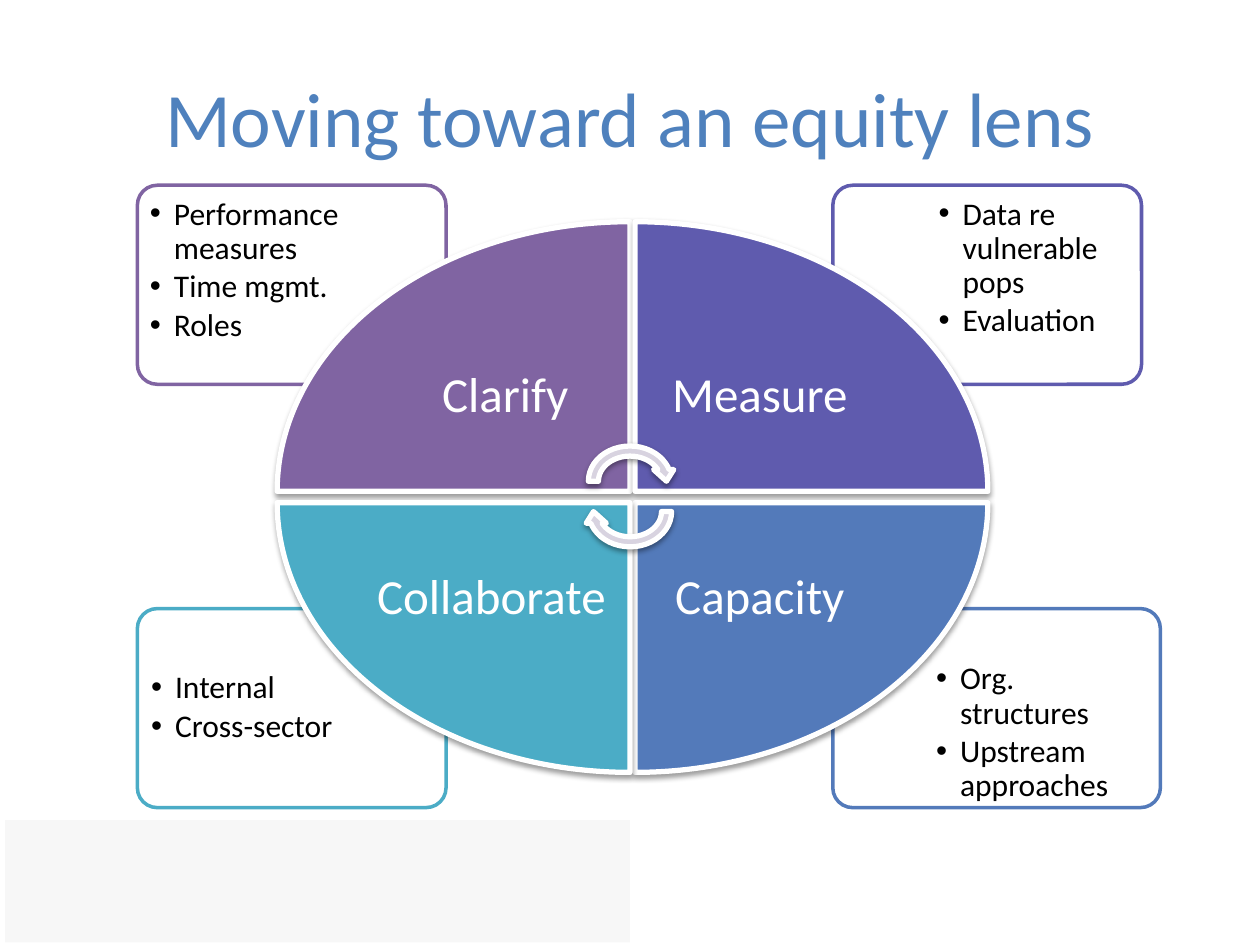
from lxml import etree
from pptx import Presentation
from pptx.dml.color import RGBColor
from pptx.enum.shapes import MSO_SHAPE
from pptx.enum.text import MSO_ANCHOR, PP_ALIGN
from pptx.oxml.ns import qn
from pptx.util import Inches, Pt

RECTANGLE = MSO_SHAPE.RECTANGLE
ROUNDED = MSO_SHAPE.ROUNDED_RECTANGLE
WEDGE = MSO_SHAPE.PIE_WEDGE
ARROW = MSO_SHAPE.CIRCULAR_ARROW
TOP, MIDDLE = MSO_ANCHOR.TOP, MSO_ANCHOR.MIDDLE
CENTER = PP_ALIGN.CENTER
FONT = "Calibri"

# Content: quadrants clockwise from top left; boxes are left, top, width, height
TITLE = "Moving toward an equity lens"
EVEN = (0.07,) * 4
QUADRANTS = [
    dict(name="Clarify", color="8064A2", points=["Performance measures", "Time mgmt.", "Roles"],
         card=(1.09, 1.47, 2.45, 1.58), list_box=(1.12, 1.5, 1.65, 1.12), list_insets=EVEN,
         label=(3.02, 2.39, 1.98, 1.52), label_insets=(0.22,) * 4),
    dict(name="Measure", color="5F5BAE", points=["Data re vulnerable pops", "Evaluation"],
         card=(6.61, 1.47, 2.45, 1.58), list_box=(7.38, 1.5, 1.64, 1.12), list_insets=EVEN,
         label=(5.04, 2.39, 1.98, 1.52), label_insets=(0.22,) * 4),
    dict(name="Capacity", color="537ABA", points=["Org. structures", "Upstream approaches"],
         card=(6.61, 4.83, 2.6, 1.58), list_box=(7.43, 5.26, 1.75, 1.12),
         list_insets=(0, 0, 0.07, 0.16),
         label=(5.04, 3.99, 1.98, 1.52), label_insets=(0.22,) * 4),
    dict(name="Collaborate", color="4BACC6", points=["Internal", "Cross-sector"],
         card=(1.09, 4.83, 2.45, 1.58), list_box=(1.13, 5.26, 1.64, 1.12), list_insets=EVEN,
         label=(2.98, 3.99, 2, 1.52), label_insets=(0, 0.22, 0.16, 0.22)),
]

# Wheel geometry
WEDGE_WIDTH, WEDGE_HEIGHT = 2.8, 2.14
LEFT, RIGHT, UPPER, LOWER = 2.2, 5.04, 1.76, 3.99
CORNERS = [(LEFT, UPPER), (RIGHT, UPPER), (RIGHT, LOWER), (LEFT, LOWER)]


def rgb(color):
    return RGBColor.from_string(color)


def add_child(parent, tag, **attributes):
    return etree.SubElement(parent, qn(tag), {k: str(v) for k, v in attributes.items()})


def draw(page, kind, box, fill, line=None, width=0, rotation=0):
    shape = page.shapes.add_shape(kind, *map(Inches, box))
    shape.shadow.inherit = False
    shape.rotation = rotation
    shape.fill.solid()
    shape.fill.fore_color.rgb = rgb(fill)
    if line:
        shape.line.color.rgb = rgb(line)
        shape.line.width = Pt(width)
    else:
        shape.line.fill.background()
    return shape


def draw_raised(page, kind, box, fill, rotation):
    shape = draw(page, kind, box, fill, "FFFFFF", 3, rotation)
    effects = shape._element.spPr.find(qn("a:effectLst"))
    shadow = add_child(effects, "a:outerShdw", blurRad=Pt(3.1), dist=Pt(1.6),
                       dir=90 * 60000, rotWithShape=0)
    black = add_child(shadow, "a:srgbClr", val="000000")
    add_child(black, "a:alpha", val=38000)


def style(font, size, color):
    font.name, font.size, font.color.rgb = FONT, Pt(size), rgb(color)


def write(page, box, insets, lines, size, color, anchor, bullets=False):
    frame = page.shapes.add_textbox(*map(Inches, box)).text_frame
    frame.word_wrap = True
    frame.vertical_anchor = anchor
    (frame.margin_left, frame.margin_top,
     frame.margin_right, frame.margin_bottom) = map(Inches, insets)
    for index, line in enumerate(lines):
        para = frame.add_paragraph() if index else frame.paragraphs[0]
        para.line_spacing = 0.9
        if bullets:
            para.level = 1
            para.space_after = Pt(2.7)
            properties = para._p.get_or_add_pPr()
            properties.set("marL", str(Inches(0.19)))
            properties.set("indent", str(-Inches(0.19)))
            add_child(properties, "a:buFont", typeface="Arial")
            add_child(properties, "a:buChar", char="•")
        else:
            para.alignment = CENTER
        span = para.add_run()
        span.text = line
        style(span.font, size, color)


deck = Presentation()
deck.slide_width, deck.slide_height = Inches(10), Inches(7.5)
page = deck.slides.add_slide(deck.slide_layouts[5])

# Footer band and title
draw(page, RECTANGLE, (0.04, 6.51, 4.96, 0.97), "F7F7F7")
title = page.shapes.title
title.left, title.top, title.width, title.height = map(Inches, (0.5, 0.3, 9, 1.25))
title.text_frame.vertical_anchor = MIDDLE
para = title.text_frame.paragraphs[0]
para.alignment = CENTER
span = para.add_run()
span.text = TITLE
style(span.font, 44, "4F81BD")

# Cards behind the wheel
for quadrant in reversed(QUADRANTS):
    card = draw(page, ROUNDED, quadrant["card"], "FFFFFF", quadrant["color"], 2)
    card.adjustments[0] = 0.1
    white = card._element.spPr.find(qn("a:solidFill")).find(qn("a:srgbClr"))
    add_child(white, "a:alpha", val=90000)
    write(page, quadrant["list_box"], quadrant["list_insets"], quadrant["points"],
          18, "000000", TOP, bullets=True)

# Wheel: each wedge turns a quarter further; odd quarters swap width and height
for turn, (quadrant, (left, top)) in enumerate(zip(QUADRANTS, CORNERS)):
    width, height = WEDGE_WIDTH, WEDGE_HEIGHT
    if turn % 2:
        shift = (width - height) / 2
        left, top = left + shift, top - shift
        width, height = height, width
    draw_raised(page, WEDGE, (left, top, width, height), quadrant["color"], 90 * turn)
    write(page, quadrant["label"], quadrant["label_insets"], [quadrant["name"]],
          28, "FFFFFF", MIDDLE)

# Rotation arrows at the hub
for top, rotation in [(3.5, 0), (3.74, 180)]:
    draw_raised(page, ARROW, (4.63, top, 0.74, 0.64), "D8D3E0", rotation)

deck.save("out.pptx")
